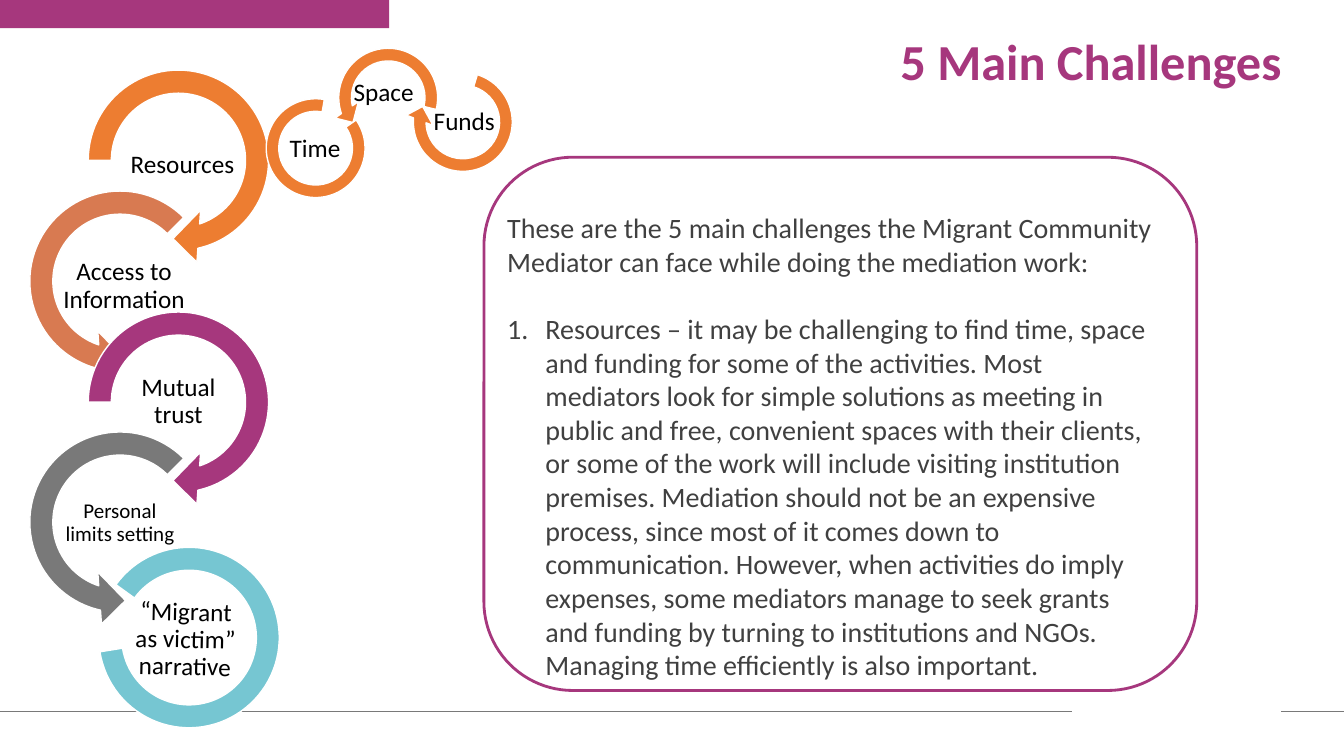
from lxml import etree
from pptx import Presentation
from pptx.dml.color import RGBColor
from pptx.enum.shapes import MSO_CONNECTOR, MSO_SHAPE
from pptx.enum.text import MSO_ANCHOR, MSO_AUTO_SIZE, PP_ALIGN
from pptx.oxml.ns import qn
from pptx.util import Pt

PX = 9144  # EMU per px, 100 px to the inch

RECTANGLE = MSO_SHAPE.RECTANGLE
ROUNDED = MSO_SHAPE.ROUNDED_RECTANGLE
RIGHT_ARROW = MSO_SHAPE.CIRCULAR_ARROW
LEFT_ARROW = MSO_SHAPE.LEFT_CIRCULAR_ARROW
ARC = MSO_SHAPE.BLOCK_ARC
STRAIGHT = MSO_CONNECTOR.STRAIGHT
TOP, MIDDLE = MSO_ANCHOR.TOP, MSO_ANCHOR.MIDDLE
LEFT, CENTER = PP_ALIGN.LEFT, PP_ALIGN.CENTER
NO_AUTOFIT = MSO_AUTO_SIZE.NONE

WHITE = RGBColor(0xFF, 0xFF, 0xFF)
BLACK = RGBColor(0, 0, 0)
DARK = RGBColor(0x40, 0x40, 0x40)
GRAY = RGBColor(0x79, 0x79, 0x79)
PURPLE = RGBColor(0xA6, 0x37, 0x7D)
ORANGE = RGBColor(0xED, 0x7D, 0x31)
RUST = RGBColor(0xD8, 0x7A, 0x51)
TEAL = RGBColor(0x76, 0xC6, 0xD2)

FONT = "Calibri"
ARROW_HEAD = (0.11, 11.42)
ADJUSTMENTS = {
    RIGHT_ARROW: (*ARROW_HEAD, 45, 108, 0.125),
    LEFT_ARROW: (*ARROW_HEAD, 63, 189, 0.125),
    ARC: (135, 108, 0.127),
}

# kind, left, top, size, rotation, colour
RINGS = [
    (RIGHT_ARROW, 73, 55, 208, 0, ORANGE),
    (LEFT_ARROW, 15, 175, 208, 0, RUST),
    (RIGHT_ARROW, 73, 295, 208, 0, PURPLE),
    (LEFT_ARROW, 15, 414, 208, 0, GRAY),
    (ARC, 98, 543, 179, 350.9, TEAL),
    (RIGHT_ARROW, 402, 64, 114, 107.1, ORANGE),
    (LEFT_ARROW, 328, 40, 114, 58.8, ORANGE),
    (ARC, 264, 98, 98, 100.2, ORANGE),
]

# text, box, text size, rotation
LABELS = [
    ("Resources", (123, 135, 116, 58), 18, 0),
    ("Access to Information", (43, 255, 160, 58), 18, 0),
    ("Mutual trust", (119, 370, 116, 58), 18, 0),
    ("Personal limits setting", (61, 490, 116, 58), 15, 0),
    ("“Migrant as victim” narrative", (126, 606, 116, 58), 18, 1.3),
    ("Funds", (429, 105, 63, 32), 18, 0),
    ("Space", (349, 77, 63, 32), 18, 0),
    ("Time", (281, 132, 63, 32), 18, 0),
]

INTRO = ("These are the 5 main challenges the Migrant Community Mediator "
         "can face while doing the mediation work:")
RESOURCES = (
    "Resources – it may be challenging to find time, space and funding for "
    "some of the activities. Most mediators look for simple solutions as "
    "meeting in public and free, convenient spaces with their clients, or "
    "some of the work will include visiting institution premises. Mediation "
    "should not be an expensive process, since most of it comes down to "
    "communication. However, when activities do imply expenses, some "
    "mediators manage to seek grants and funding by turning to institutions "
    "and NGOs. Managing time efficiently is also important.")


def px(*values):
    return [value * PX for value in values]


def apply_format(target, values):
    for name, value in values.items():
        setattr(target, name, value)


def place(shape, box):
    apply_format(shape, dict(zip(("left", "top", "width", "height"), px(*box))))


def write(paragraph, text, size, color, bold=False, **layout):
    apply_format(paragraph, {"space_before": Pt(0), "space_after": Pt(0), **layout})
    run = paragraph.add_run()
    run.text = text
    apply_format(run.font, {"name": FONT, "size": Pt(size), "bold": bold})
    run.font.color.rgb = color


def add_shape(slide, kind, box, fill=None, line=None, width=1, rotation=0):
    shape = slide.shapes.add_shape(kind, *px(*box))
    shape.shadow.inherit = False
    shape.rotation = rotation
    for index, value in enumerate(ADJUSTMENTS.get(kind, ())):
        shape.adjustments[index] = value
    for paint, color in ((shape.fill, fill), (shape.line.fill, line)):
        if color is None:
            paint.background()
        else:
            paint.solid()
            paint.fore_color.rgb = color
    if line is not None:
        shape.line.width = Pt(width)


def add_rule(slide, start, end, y):
    rule = slide.shapes.add_connector(STRAIGHT, *px(start, y, end, y))
    rule.line.color.rgb = GRAY
    rule.line.width = Pt(0.5)
    etree.SubElement(rule._element.spPr, qn("a:effectLst"))


def add_label(slide, text, box, size, rotation):
    label = slide.shapes.add_textbox(*px(*box))
    label.rotation = rotation
    margins = {f"margin_{side}": PX for side in ("left", "top", "right", "bottom")}
    apply_format(label.text_frame,
                 {"word_wrap": True, "vertical_anchor": MIDDLE, **margins})
    write(label.text_frame.paragraphs[0], text, size, BLACK,
          alignment=CENTER, line_spacing=0.9)


def set_bullet(paragraph, indent, tag, **attributes):
    properties = paragraph._p.get_or_add_pPr()
    properties.set("marL", str(indent * PX))
    properties.set("indent", str(-indent * PX))
    etree.SubElement(properties, qn(tag), attributes)


def fill_title(slide):
    title = slide.shapes.title
    place(title, (883, 32, 432, 118))
    apply_format(title.text_frame, {"auto_size": NO_AUTOFIT, "word_wrap": True,
                                    "vertical_anchor": TOP})
    write(title.text_frame.paragraphs[0], "5 Main Challenges", 36, PURPLE,
          bold=True, alignment=LEFT, line_spacing=0.9)


def fill_body(slide):
    body = slide.placeholders[1]
    place(body, (493, 204, 661, 481))
    frame = body.text_frame
    apply_format(frame, {"auto_size": NO_AUTOFIT, "word_wrap": True,
                         "vertical_anchor": TOP})
    intro = frame.paragraphs[0]
    write(intro, INTRO, 20, DARK, alignment=LEFT, line_spacing=1.0)
    set_bullet(intro, 0, "a:buNone")
    challenge = frame.add_paragraph()
    write(challenge, RESOURCES, 20, DARK, alignment=LEFT, line_spacing=1.0,
          space_before=Pt(24))
    set_bullet(challenge, 38, "a:buAutoNum", type="arabicPeriod")


def main():
    presentation = Presentation()
    presentation.slide_width, presentation.slide_height = px(1333, 750)
    slide = presentation.slides.add_slide(presentation.slide_layouts[1])

    # Page frame
    add_shape(slide, RECTANGLE, (0, 0, 386, 28), fill=PURPLE)
    add_rule(slide, 0, 1063, 706)
    add_rule(slide, 1271, 1333, 706)

    # Title and explanation
    fill_title(slide)
    fill_body(slide)
    add_shape(slide, ROUNDED, (480, 156, 707, 529), line=PURPLE, width=2)

    # Chain of challenges; each ring lies under its label
    for ring, label in zip(RINGS, LABELS):
        kind, left, top, size, rotation, color = ring
        add_shape(slide, kind, (left, top, size, size), color, WHITE,
                  rotation=rotation)
        add_label(slide, *label)

    presentation.save("out.pptx")


if __name__ == "__main__":
    main()
